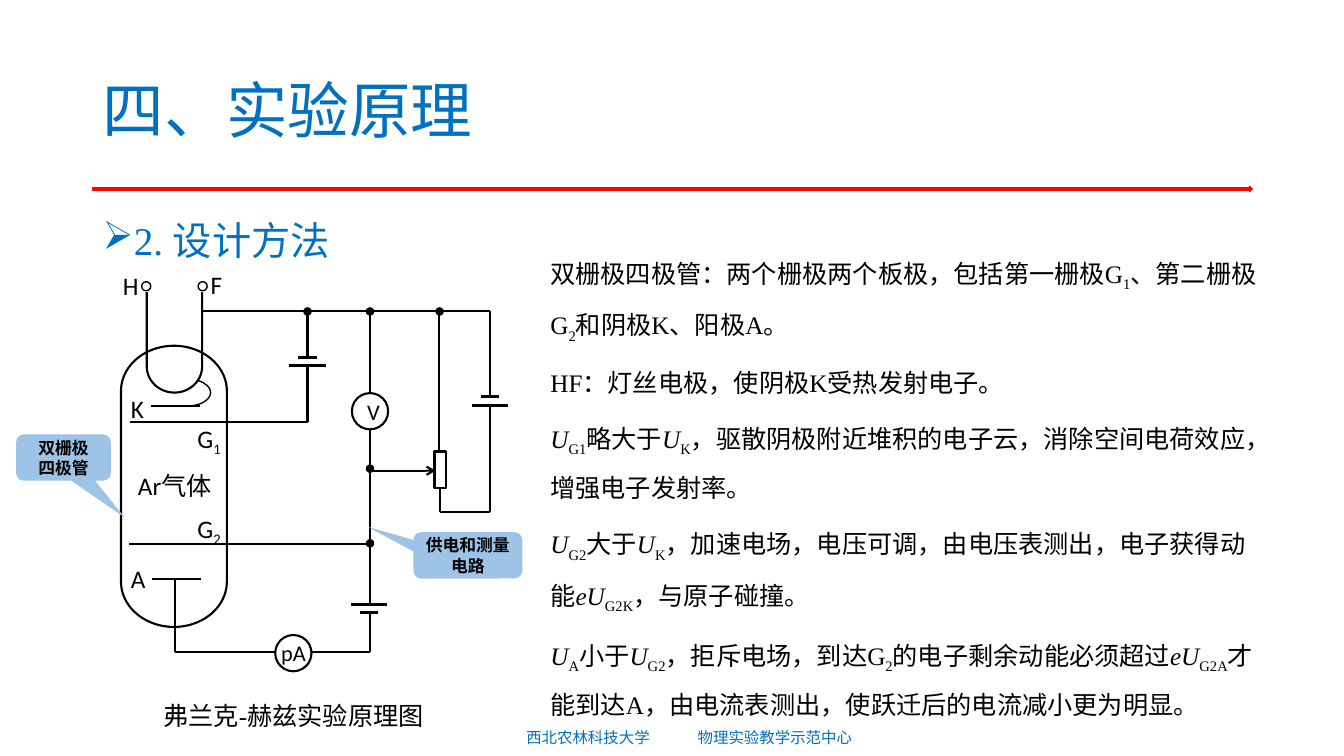
from itertools import pairwise

from lxml.etree import SubElement
from pptx import Presentation
from pptx.dml.color import RGBColor
from pptx.enum.shapes import MSO_CONNECTOR, MSO_SHAPE
from pptx.enum.text import MSO_ANCHOR, PP_ALIGN
from pptx.oxml.ns import qn
from pptx.util import Inches, Pt

BLUE = RGBColor(0x00, 0x70, 0xC0)
RED = RGBColor(0xFF, 0x00, 0x00)
BLACK = RGBColor(0x00, 0x00, 0x00)
WHITE = RGBColor(0xFF, 0xFF, 0xFF)
PALE_BLUE = RGBColor(0x9D, 0xC3, 0xE6)
SERIF, SANS, CHINESE = "Times New Roman", "Calibri", "Noto Sans CJK JP"

TITLE = "四、实验原理"
HEADING = "2. 设计方法"
CAPTION = "弗兰克-赫兹实验原理图"
FOOTER = "西北农林科技大学\t物理实验教学示范中心"

# Spans are parted by "|"; "_" starts a subscript and "*" an italic span.
NOTES = [
    "双栅极四极管：两个栅极两个板极，包括第一栅极G|_1|、第二栅极G|_2|和阴极K、阳极A。",
    "HF：灯丝电极，使阴极K受热发射电子。",
    "*U|_G1|略大于|*U|_K|，驱散阴极附近堆积的电子云，消除空间电荷效应，增强电子发射率。",
    "*U|_G2|大于|*U|_K|，加速电场，电压可调，由电压表测出，电子获得动能|*eU|_G2K|，与原子碰撞。",
    "*U|_A|小于|*U|_G2|，拒斥电场，到达G|_2|的电子剩余动能必须超过|*eU|_G2A"
    "|才能到达A，由电流表测出，使跃迁后的电流减小更为明显。",
]

WIRES = [
    [(2.01, 3.09), (4.86, 3.09), (4.86, 3.93)],
    [(3.05, 3.09), (3.05, 3.55)],
    [(3.05, 3.63), (3.05, 4.19), (1.29, 4.19)],
    [(1.5, 4.03), (1.98, 4.03)],
    [(1.28, 5.4), (3.67, 5.4)],
    [(3.67, 3.09), (3.67, 3.9)],
    [(3.67, 4.27), (3.67, 6)],
    [(3.67, 6.08), (3.67, 6.47), (3.09, 6.47)],
    [(2.73, 6.47), (1.74, 6.47), (1.74, 5.74)],
    [(1.51, 5.74), (1.99, 5.74)],
    [(4.35, 3.09), (4.35, 4.49)],
    [(4.86, 4.02), (4.86, 5.08), (4.36, 5.08), (4.36, 4.84)],
]
SLIDER = [(3.67, 4.67), (4.32, 4.67)]
BATTERIES = [(3.05, 3.55, 3.63), (3.66, 6.08, 6), (4.86, 3.93, 4.02)]  # x, short y, long y
JUNCTIONS = [(3.05, 3.09), (3.67, 3.09), (4.36, 3.09), (3.67, 4.65), (3.67, 5.39)]
TERMINALS = [(1.45, 2.84), (2.01, 2.84)]
METERS = [(3.67, 4.08, "V"), (2.91, 6.48, "")]
LABELS = [
    ("G|_1", 1.86, 4.15, 0.76), ("G|_2", 1.86, 5.04, 0.76), ("K", 1.2, 3.85, 0.39),
    ("A", 1.2, 5.54, 0.39), ("H", 1.12, 2.63, 0.39), ("F", 1.99, 2.62, 0.39),
    ("Ar气体", 1.27, 4.62, 1.06),
]
CALLOUTS = [
    (["双栅极", "四极管"], (0.16, 4.31, 0.94, 0.46), (0.645, 1.292, 0.167)),
    (["供电和测量电路"], (4.1, 5.28, 1.08, 0.46), (-0.919, -0.614, 0.167)),
]


def write(frame, texts, size, font=SERIF, color=BLACK, align=PP_ALIGN.LEFT,
          spacing=None, before=0, bold=False):
    for number, text in enumerate(texts):
        para = frame.paragraphs[0] if number == 0 else frame.add_paragraph()
        for part in text.split("|"):
            span = para.add_run()
            span.text = part.lstrip("_*")
            if part.startswith("_"):
                span.font._element.set("baseline", "-25000")
            elif part.startswith("*"):
                span.font.italic = True
        para.alignment = align
        if spacing:
            para.line_spacing = spacing
        if number and before:
            para.space_before = Pt(before)
        para.font.size, para.font.name = Pt(size), font
        para.font.color.rgb = color
        para.font.bold = bold


def add_text(parent, place, texts, size, anchor=MSO_ANCHOR.TOP, wrap=True, **style):
    box = parent.shapes.add_textbox(*map(Inches, place))
    box.text_frame.word_wrap = wrap
    box.text_frame.vertical_anchor = anchor
    write(box.text_frame, texts, size, **style)
    return box


def add_shape(parent, kind, place, fill=None, line=BLACK, width=1.5):
    shape = parent.shapes.add_shape(kind, *map(Inches, place))
    shape.shadow.inherit = False
    if fill is None:
        shape.fill.background()
    else:
        shape.fill.solid()
        shape.fill.fore_color.rgb = fill
    if line is None:
        shape.line.fill.background()
    else:
        shape.line.color.rgb = line
        shape.line.width = Pt(width)
    return shape


def add_circle(parent, x, y, diameter, **style):
    place = (x - diameter / 2, y - diameter / 2, diameter, diameter)
    return add_shape(parent, MSO_SHAPE.OVAL, place, **style)


def add_line(parent, start, end, width=1.5):
    line = parent.shapes.add_connector(MSO_CONNECTOR.STRAIGHT, *map(Inches, start + end))
    line.line.color.rgb = BLACK
    line.line.width = Pt(width)
    SubElement(line._element.spPr, qn("a:effectLst"))
    return line


def draw_tube(circuit):
    add_shape(circuit, MSO_SHAPE.FLOWCHART_TERMINATOR, (0.33, 4.3, 2.79, 1.05)).rotation = 90
    add_shape(circuit, MSO_SHAPE.FLOWCHART_TERMINATOR, (0.92, 2.81, 1.62, 0.55)).rotation = 90
    # The filament is open at its top
    add_shape(circuit, MSO_SHAPE.RECTANGLE, (1.43, 2.17, 0.61, 0.73), fill=WHITE, line=None)
    cathode = add_shape(circuit, MSO_SHAPE.ARC, (1.61, 3.76, 0.48, 0.27), width=1)
    cathode.adjustments[0], cathode.adjustments[1] = 187.64, 47.47


def draw_circuit(circuit):
    for wire in WIRES:
        for start, end in pairwise(wire):
            add_line(circuit, start, end)
    for x, short_y, long_y in BATTERIES:
        for half, y in ((0.09, short_y), (0.18, long_y)):
            add_line(circuit, (x - half, y), (x + half, y), width=2)
    arrow = add_line(circuit, *SLIDER)
    SubElement(arrow.line._get_or_add_ln(), qn("a:tailEnd"), type="arrow")
    add_shape(circuit, MSO_SHAPE.RECTANGLE, (4.31, 4.48, 0.11, 0.36), fill=WHITE)
    for x, y in TERMINALS:
        add_circle(circuit, x, y, 0.09, width=1)
    for x, y in JUNCTIONS:
        add_circle(circuit, x, y, 0.07, fill=BLACK, width=1)
    for x, y, name in METERS:
        meter = add_circle(circuit, x, y, 0.36)
        if name:
            write(meter.text_frame, [name], 16, font=SANS, align=PP_ALIGN.CENTER)
    add_text(circuit, (2.69, 6.29, 0.45, 0.37), ["pA"], 16, wrap=False, font=SANS)
    for text, x, y, width in LABELS:
        add_text(circuit, (x, y, width, 0.4), [text], 18, font=SANS)
    for lines, place, pointer in CALLOUTS:
        callout = add_shape(circuit, MSO_SHAPE.ROUNDED_RECTANGULAR_CALLOUT, place,
                            fill=PALE_BLUE, line=None)
        for number, value in enumerate(pointer):
            callout.adjustments[number] = value
        write(callout.text_frame, lines, 12, font=SANS, align=PP_ALIGN.CENTER, bold=True)


def main():
    deck = Presentation()
    deck.slide_width, deck.slide_height = Inches(13.33), Inches(7.5)
    page = deck.slides.add_slide(deck.slide_layouts[5])

    title = page.shapes.title
    title.left, title.top, title.width, title.height = map(Inches, (0.92, 0.4, 11.5, 1.45))
    title.text_frame.vertical_anchor = MSO_ANCHOR.MIDDLE
    write(title.text_frame, [TITLE], 44, color=BLUE, spacing=0.9)
    add_shape(page, MSO_SHAPE.RIGHT_ARROW, (0.92, 1.85, 11.5, 0.05), fill=RED, line=RED, width=1)

    footer = add_text(page, (4.58, 7.12, 4.5, 0.4), [FOOTER], 11, anchor=MSO_ANCHOR.MIDDLE,
                      font=CHINESE, color=BLUE)
    footer.text_frame.margin_left = Inches(0.64)
    tabs = footer.text_frame.paragraphs[0]._p.get_or_add_pPr()
    tab_list = SubElement(tabs, qn("a:tabLst"))
    SubElement(tab_list, qn("a:tab"), pos=str(Inches(1.7)), algn="l")
    tabs.insert(0, tab_list)

    add_text(page, (5.36, 2.34, 7.28, 4.53), NOTES, 18, spacing=1.5, before=6)

    circuit = page.shapes.add_group_shape()
    draw_tube(circuit)
    draw_circuit(circuit)

    heading = add_text(page, (0.92, 2.15, 3.84, 0.6), [HEADING], 28, color=BLUE, spacing=0.9)
    bullet = heading.text_frame.paragraphs[0]._p.get_or_add_pPr()
    bullet.set("marL", str(Inches(0.25)))
    bullet.set("indent", str(Inches(-0.25)))
    mark = SubElement(bullet, qn("a:buChar"), char="➢")
    bullet.find(qn("a:defRPr")).addprevious(mark)

    add_text(page, (1.37, 6.75, 3.08, 0.56), [CAPTION], 18, align=PP_ALIGN.CENTER, spacing=1.5)
    deck.save("out.pptx")


if __name__ == "__main__":
    main()
